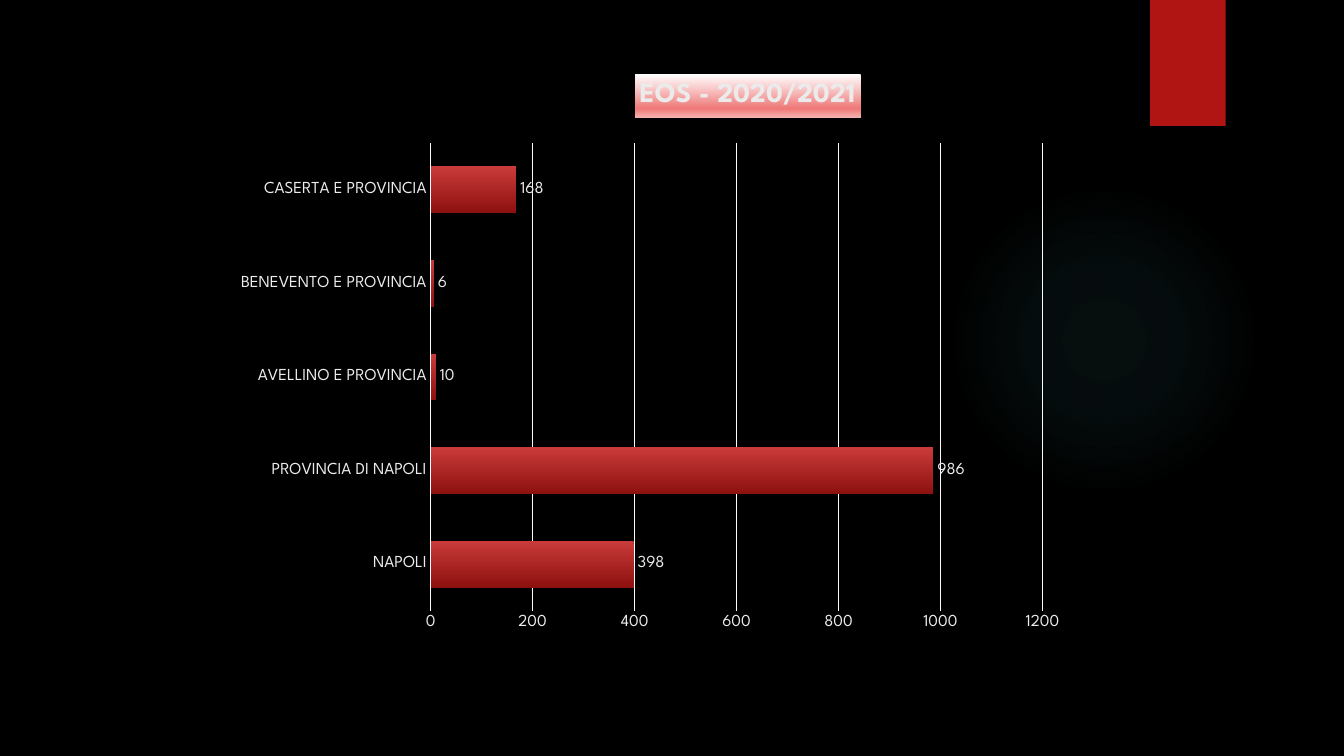
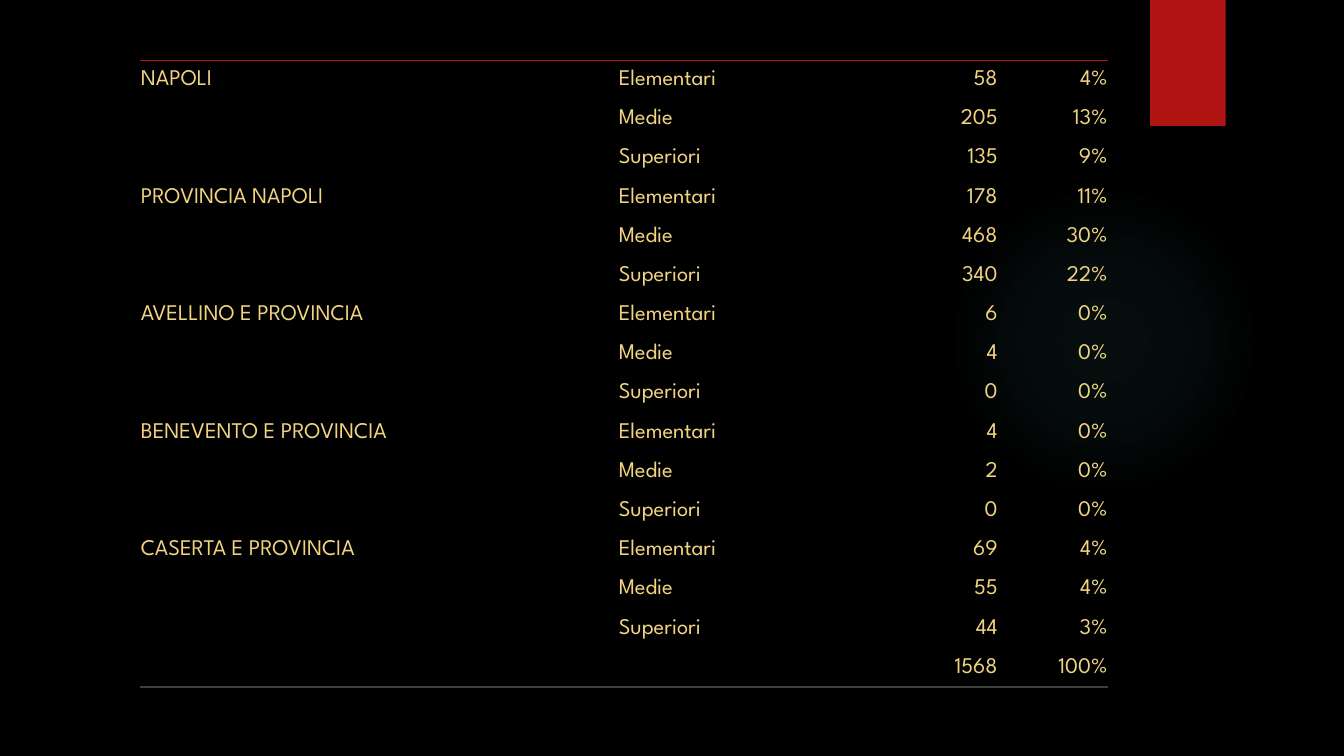
import lxml.etree
import pptx
import pptx.chart.data
import pptx.dml.color
import pptx.enum.chart
import pptx.enum.shapes
import pptx.enum.text
import pptx.oxml
import pptx.oxml.ns
import pptx.util

Pt = pptx.util.Pt
qn = pptx.oxml.ns.qn

TITLE = "EOS - 2020/2021"
LEVELS = ("Elementari", "Medie", "Superiori")
# Chart label, table label, pupils per school level
AREAS = [
    ("NAPOLI", "NAPOLI", (58, 205, 135)),
    ("PROVINCIA DI NAPOLI", "PROVINCIA NAPOLI", (178, 468, 340)),
    ("AVELLINO E PROVINCIA", "AVELLINO E PROVINCIA", (6, 4, 0)),
    ("BENEVENTO E PROVINCIA", "BENEVENTO E PROVINCIA", (4, 2, 0)),
    ("CASERTA E PROVINCIA", "CASERTA E PROVINCIA", (69, 55, 44)),
]


def rgb(color):
    return pptx.dml.color.RGBColor.from_string(color)


def format_font(font, size, color, bold=False):
    font.name = Deck.FONT
    font.size = Pt(size)
    font.bold = bold
    font.color.rgb = rgb(color)


def write_text(text_frame, text, size=16, color="FFFFFF", bold=False, align=None):
    paragraph = text_frame.paragraphs[0]
    paragraph.text = text
    paragraph.alignment = align
    format_font(paragraph.font, size, color, bold)
    for run in paragraph.runs:
        format_font(run.font, size, color, bold)


def add_child(parent, tag, **attributes):
    child = lxml.etree.SubElement(parent, qn(tag))
    for name, value in attributes.items():
        child.set(name, str(value))
    return child


def fill_gradient(fill, owner, stops, radial=False):
    """Fill with (percent, color, opacity) stops, downwards or from the centre."""
    fill.gradient()
    gradient = owner.xpath(".//a:gradFill")[0]
    for child in list(gradient):
        gradient.remove(child)
    stop_list = add_child(gradient, "a:gsLst")
    for percent, color, opacity in stops:
        stop = add_child(stop_list, "a:gs", pos=percent * 1000)
        color_element = add_child(stop, "a:srgbClr", val=color)
        add_child(color_element, "a:alpha", val=opacity * 1000)
    if radial:
        path = add_child(gradient, "a:path", path="circle")
        add_child(path, "a:fillToRect", l=50000, t=50000, r=50000, b=50000)
    else:
        add_child(gradient, "a:lin", ang=5400000, scaled=0)


def place_chart_part(part, index, **fractions):
    """Fix a chart part by fractions of the chart area."""
    for old_layout in part.findall(qn("c:layout")):
        part.remove(old_layout)
    layout = pptx.oxml.parse_xml(
        f'<c:layout {pptx.oxml.ns.nsdecls("c")}><c:manualLayout/></c:layout>')
    manual = layout[0]
    if "w" in fractions:
        add_child(manual, "c:layoutTarget", val="inner")
    for name in ("x", "y"):
        add_child(manual, f"c:{name}Mode", val="edge")
    for name, value in fractions.items():
        add_child(manual, f"c:{name}", val=value)
    part.insert(index, layout)


class Deck:
    FONT = "League Spartan"
    BACKGROUND = "000000"
    ACCENT = "B01513"
    GLOW = "50B9C1"
    LABEL = "EBEBEB"
    GRID = "FCFCFC"
    TABLE_TEXT = "F0D47F"
    TABLE_END = "404040"

    def __init__(self):
        self.presentation = pptx.Presentation()
        self.presentation.slide_width = Pt(960)
        self.presentation.slide_height = Pt(540)
        self.slide = None

    def add_slide(self):
        self.slide = self.presentation.slides.add_slide(
            self.presentation.slide_layouts[6])

    def add_shape(self, kind, left, top, width, height):
        shape = self.slide.shapes.add_shape(
            kind, Pt(left), Pt(top), Pt(width), Pt(height))
        shape.shadow.inherit = False
        shape.line.fill.background()
        return shape

    def decorate_master(self):
        """Give the master its background, glow and red tab."""
        master = self.presentation.slide_master
        master.background.fill.solid()
        master.background.fill.fore_color.rgb = rgb(self.BACKGROUND)
        kinds = pptx.enum.shapes.MSO_SHAPE
        glow = self.add_shape(kinds.OVAL, 677.5, 131.8, 221.8, 221.8)
        fill_gradient(glow.fill, glow.element,
                      [(0, self.GLOW, 7), (36, self.GLOW, 6), (69, self.GLOW, 0)],
                      radial=True)
        tab = self.add_shape(kinds.RECTANGLE, 821.5, 0, 54, 90)
        tab.fill.solid()
        tab.fill.fore_color.rgb = rgb(self.ACCENT)
        for shape_id, shape in enumerate((glow, tab), start=101):
            shape.element.xpath("./p:nvSpPr/p:cNvPr")[0].set("id", str(shape_id))
            master.shapes.element.append(shape.element)

    def add_bar_chart(self, title, categories, values, left, top, width, height):
        enums = pptx.enum.chart
        data = pptx.chart.data.CategoryChartData()
        data.categories = categories
        data.add_series(title, values)
        chart = self.slide.shapes.add_chart(
            enums.XL_CHART_TYPE.BAR_CLUSTERED,
            Pt(left), Pt(top), Pt(width), Pt(height), data).chart
        chart.has_legend = False
        format_font(chart.font, 10, "FFFFFF")

        # Title on a gradient panel
        chart.has_title = True
        chart_title = chart.chart_title
        write_text(chart_title.text_frame, title, size=20, color=self.LABEL, bold=True)
        fill_gradient(chart_title.format.fill, chart_title.element,
                      [(0, "FFFFFF", 100), (80, "EF7878", 100), (100, "F6B0B0", 100)])
        place_chart_part(chart_title.element, 1, x=0.48, y=0.01)
        place_chart_part(chart.element.xpath(".//c:plotArea")[0], 0,
                         x=0.24, y=0.13, w=0.72, h=0.82)

        # Bars and their values
        plot = chart.plots[0]
        plot.gap_width = 100
        plot.vary_by_categories = False
        series = plot.series[0]
        fill_gradient(series.format.fill, series._element,
                      [(0, "C93B3A", 100), (100, "8D110F", 100)])
        plot.has_data_labels = True
        plot.data_labels.show_value = True
        plot.data_labels.position = enums.XL_LABEL_POSITION.OUTSIDE_END
        format_font(plot.data_labels.font, 12, self.LABEL)

        # Axes
        for axis in (chart.category_axis, chart.value_axis):
            axis.major_tick_mark = enums.XL_TICK_MARK.NONE
            axis.minor_tick_mark = enums.XL_TICK_MARK.NONE
            format_font(axis.tick_labels.font, 12, self.LABEL)
        chart.value_axis.minimum_scale = 0
        chart.value_axis.maximum_scale = 1200
        chart.value_axis.major_unit = 200
        chart.value_axis.has_major_gridlines = True
        chart.value_axis.format.line.fill.background()
        for line in (chart.category_axis.format.line,
                     chart.value_axis.major_gridlines.format.line):
            line.color.rgb = rgb(self.GRID)
            line.width = Pt(0.75)

    def add_border(self, cell, tag, color):
        properties = cell._tc.get_or_add_tcPr()
        line = add_child(properties, tag, w=Pt(1))
        add_child(add_child(line, "a:solidFill"), "a:srgbClr", val=color)
        properties.insert(0, line)

    def add_table(self, rows, left, top, column_widths, row_height):
        frame = self.slide.shapes.add_table(
            len(rows), len(column_widths), Pt(left), Pt(top),
            Pt(sum(column_widths)), Pt(row_height * len(rows)))
        table = frame.table
        table.first_row = table.horz_banding = False
        # Style without fills or grid
        frame.element.xpath(".//a:tableStyleId")[0].text = (
            "{2D5ABB26-0587-4C30-8999-92F81FD0307C}")
        for column, width in zip(table.columns, column_widths):
            column.width = Pt(width)
        for row_index, values in enumerate(rows):
            table.rows[row_index].height = Pt(row_height)
            for column_index, value in enumerate(values):
                cell = table.cell(row_index, column_index)
                cell.margin_left = cell.margin_right = cell.margin_top = Pt(0.7)
                cell.margin_bottom = 0
                cell.vertical_anchor = pptx.enum.text.MSO_ANCHOR.MIDDLE
                cell.fill.background()
                alignments = pptx.enum.text.PP_ALIGN
                write_text(cell.text_frame, value, size=16, color=self.TABLE_TEXT,
                           align=alignments.RIGHT if column_index > 1 else alignments.LEFT)
                if row_index == 0:
                    self.add_border(cell, "a:lnT", self.ACCENT)
                if row_index == len(rows) - 1:
                    self.add_border(cell, "a:lnB", self.TABLE_END)


def table_rows():
    total = sum(sum(counts) for _, _, counts in AREAS)
    rows = []
    for _, area, counts in AREAS:
        for index, (level, count) in enumerate(zip(LEVELS, counts)):
            rows.append((area if index == 0 else "", level,
                         str(count), f"{count / total:.0%}"))
    return rows + [("", "", str(total), "100%")]


def main():
    deck = Deck()

    # Slide 1: pupils per area
    deck.add_slide()
    deck.decorate_master()
    deck.add_bar_chart(TITLE, [label for label, _, _ in AREAS],
                       [sum(counts) for _, _, counts in AREAS],
                       left=162, top=49, width=607, height=408)

    # Slide 2: pupils per area and school level
    deck.add_slide()
    deck.add_table(table_rows(), left=100, top=43,
                   column_widths=(341.3, 172, 100, 78.5), row_height=28)

    deck.presentation.save("out.pptx")


if __name__ == "__main__":
    main()
